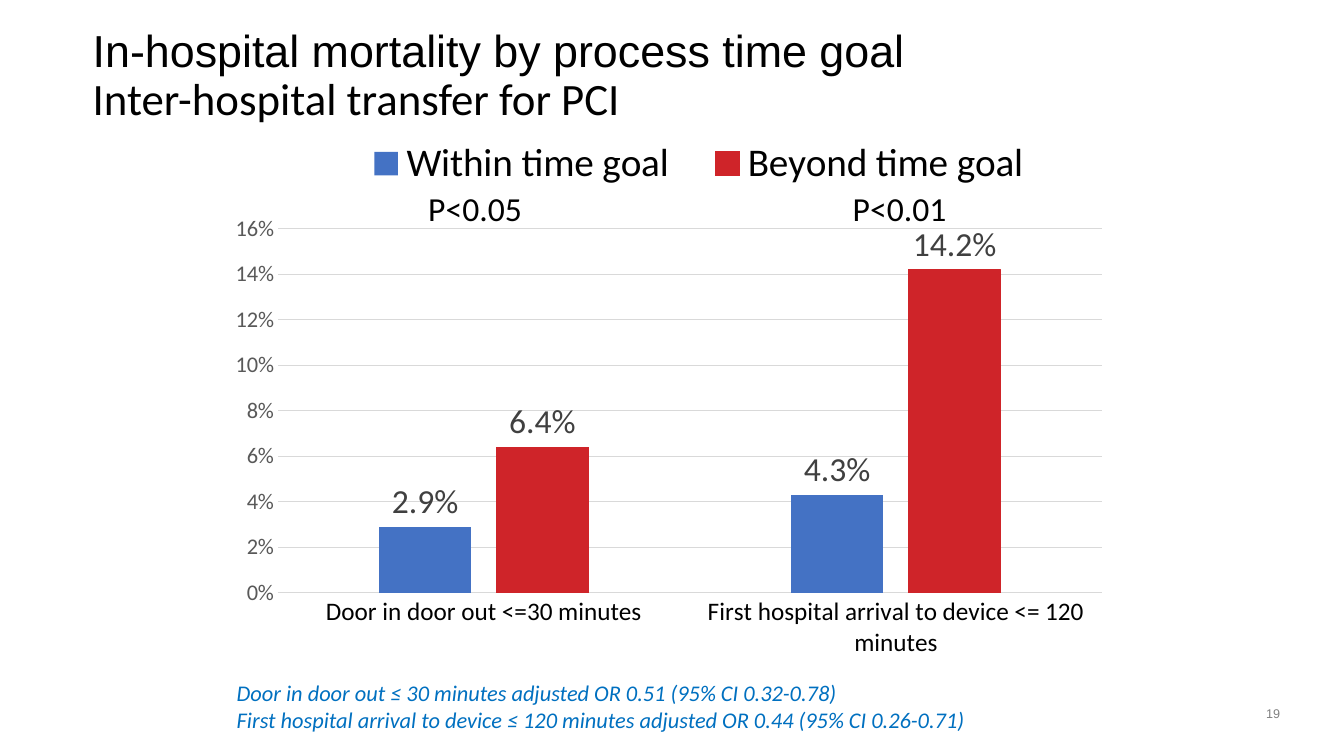
from dataclasses import dataclass
from typing import Any, NamedTuple

from lxml import etree
from pptx import Presentation
from pptx.chart.data import CategoryChartData
from pptx.dml.color import RGBColor
from pptx.enum.chart import (XL_CHART_TYPE, XL_LABEL_POSITION,
                             XL_LEGEND_POSITION, XL_TICK_MARK)
from pptx.enum.text import MSO_ANCHOR, MSO_AUTO_SIZE, PP_ALIGN
from pptx.oxml.ns import qn
from pptx.util import Inches, Pt

CLUSTERED = XL_CHART_TYPE.COLUMN_CLUSTERED
OUTSIDE_END = XL_LABEL_POSITION.OUTSIDE_END
BOTTOM = XL_LEGEND_POSITION.BOTTOM
NO_TICK = XL_TICK_MARK.NONE
MIDDLE = MSO_ANCHOR.MIDDLE
NO_FIT = MSO_AUTO_SIZE.NONE
LEFT, CENTER = PP_ALIGN.LEFT, PP_ALIGN.CENTER

SLIDE_W, SLIDE_H = Inches(13.33), Inches(7.5)
COLUMNS, ROWS = 48, 27


# Theme
@dataclass(frozen=True)
class Theme:
    heading: str = "Arial"
    body: str = "Calibri"
    ink: str = "000000"
    label: str = "404040"
    axis: str = "595959"
    grid: str = "D9D9D9"
    number: str = "808080"
    note: str = "0070C0"
    within: str = "4472C4"
    beyond: str = "CF2429"
    title_size: int = 32
    legend_size: int = 28
    value_size: int = 24
    category_size: int = 18
    small_size: int = 16
    number_size: int = 9
    hairline: float = 0.75


THEME = Theme()


class Area(NamedTuple):
    """Left, top, width and height in grid columns and rows."""
    column: float
    row: float
    columns: float
    rows: float

    def box(self) -> tuple[int, int, int, int]:
        across, down = SLIDE_W / COLUMNS, SLIDE_H / ROWS
        return (round(self.column * across), round(self.row * down),
                round(self.columns * across), round(self.rows * down))


class Share(NamedTuple):
    """Left, top, width and height as shares of the chart."""
    x: float
    y: float
    w: float
    h: float


@dataclass(frozen=True)
class Outcome:
    name: str
    mortality: tuple[float, ...]
    color: str


@dataclass(frozen=True)
class Caption:
    lines: tuple[str, ...]
    area: Area
    size: int = THEME.value_size
    color: str = THEME.ink
    face: str = THEME.body
    italic: bool = False
    wrap: bool = False
    align: Any = LEFT


# Content
TITLE_LINES = (("In-hospital mortality by process time goal", THEME.heading),
               ("Inter-hospital transfer for PCI", THEME.body))
TITLE_AREA = Area(3.31, 1.44, 41.4, 2.6)
CHART_AREA = Area(8, 4.68, 32, 19.4)
PLOT_SHARE = Share(0.06, 0.18, 0.92, 0.67)
LEGEND_SHARE = Share(0.13, 0.01, 0.8, 0.1)
GOALS = ("Door in door out <=30 minutes",
         "First hospital arrival to device <= 120 minutes")
OUTCOMES = (Outcome("Within time goal", (0.029, 0.043), THEME.within),
            Outcome("Beyond time goal", (0.064, 0.142), THEME.beyond))
CAPTIONS = (
    Caption(("Door in door out ≤ 30 minutes adjusted OR 0.51 (95% CI 0.32-0.78)",
             "First hospital arrival to device ≤ 120 minutes adjusted OR 0.44 "
             "(95% CI 0.26-0.71)"),
            Area(8.1, 24.08, 27.07, 2.3), THEME.small_size, THEME.note, italic=True),
    Caption(("P<0.05",), Area(14.94, 6.54, 4.1, 1.8)),
    Caption(("P<0.01",), Area(30.1, 6.52, 4.1, 1.8)),
    Caption(("19",), Area(44.71, 25.02, 1.51, 0.94), THEME.number_size,
            THEME.number, THEME.heading, wrap=True, align=CENTER),
)


def apply(target: Any, values: dict[str, Any]) -> None:
    for attribute, value in values.items():
        setattr(target, attribute, value)


def style_font(font: Any, size: int, color: str, face: str = THEME.body,
               italic: bool = False) -> None:
    apply(font, {"size": Pt(size), "name": face, "bold": False, "italic": italic})
    font.color.rgb = RGBColor.from_string(color)


def style_line(line: Any, color: str) -> None:
    line.color.rgb = RGBColor.from_string(color)
    line.width = Pt(THEME.hairline)


def manual_layout(share: Share, inner: bool = False) -> Any:
    layout = etree.Element(qn("c:layout"))
    manual = etree.SubElement(layout, qn("c:manualLayout"))
    settings = {"layoutTarget": "inner"} if inner else {}
    settings |= {"xMode": "edge", "yMode": "edge"}
    settings |= {key: str(value) for key, value in share._asdict().items()}
    for tag, value in settings.items():
        etree.SubElement(manual, qn(f"c:{tag}"), val=value)
    return layout


def drop_layout(parent: Any) -> None:
    for layout in parent.findall(qn("c:layout")):
        parent.remove(layout)


def add_title(slide: Any) -> None:
    title = slide.shapes.title
    apply(title, dict(zip(("left", "top", "width", "height"), TITLE_AREA.box())))
    frame = title.text_frame
    apply(frame, {"auto_size": NO_FIT, "vertical_anchor": MIDDLE, "word_wrap": True,
                  "margin_left": 0, "margin_top": 0,
                  "margin_right": 0, "margin_bottom": 0})
    heading = frame.paragraphs[0]
    apply(heading, {"alignment": LEFT, "line_spacing": 0.9})
    for index, (words, face) in enumerate(TITLE_LINES):
        if index:
            heading.add_line_break()
        run = heading.add_run()
        run.text = words
        style_font(run.font, THEME.title_size, THEME.ink, face)


def add_caption(slide: Any, caption: Caption) -> None:
    frame = slide.shapes.add_textbox(*caption.area.box()).text_frame
    frame.word_wrap = caption.wrap
    frame.text = "\n".join(caption.lines)
    for paragraph in frame.paragraphs:
        paragraph.alignment = caption.align
        style_font(paragraph.runs[0].font, caption.size, caption.color,
                   caption.face, caption.italic)


def add_mortality_chart(slide: Any) -> None:
    data = CategoryChartData(number_format="0.0%")
    data.categories = GOALS
    for outcome in OUTCOMES:
        data.add_series(outcome.name, outcome.mortality)
    chart = slide.shapes.add_chart(CLUSTERED, *CHART_AREA.box(), data).chart
    apply(chart, {"has_title": False, "has_legend": True})
    style_font(chart.font, 10, THEME.ink)

    # Columns and their values
    columns = chart.plots[0]
    apply(columns, {"gap_width": 219, "overlap": -27, "vary_by_categories": False})
    for series, outcome in zip(columns.series, OUTCOMES):
        series.format.fill.solid()
        series.format.fill.fore_color.rgb = RGBColor.from_string(outcome.color)
        labels = series.data_labels
        apply(labels, {"show_value": True, "position": OUTSIDE_END,
                       "number_format": "0.0%", "number_format_is_linked": False})
        style_font(labels.font, THEME.value_size, THEME.label)
    style_line(columns.series[1].format.line, THEME.beyond)

    # Axes
    goals, rate = chart.category_axis, chart.value_axis
    for axis in (goals, rate):
        apply(axis, {"major_tick_mark": NO_TICK, "minor_tick_mark": NO_TICK})
    style_font(goals.tick_labels.font, THEME.category_size, THEME.ink)
    style_line(goals.format.line, THEME.grid)
    apply(rate, {"minimum_scale": 0, "maximum_scale": 0.16, "major_unit": 0.02})
    apply(rate.tick_labels, {"number_format": "0%", "number_format_is_linked": False})
    style_font(rate.tick_labels.font, THEME.small_size, THEME.axis)
    rate.format.line.fill.background()
    style_line(rate.major_gridlines.format.line, THEME.grid)

    # Legend and plot positions
    legend = chart.legend
    apply(legend, {"position": BOTTOM, "include_in_layout": False})
    style_font(legend.font, THEME.legend_size, THEME.ink)
    key = legend._element
    drop_layout(key)
    key.find(qn("c:legendPos")).addnext(manual_layout(LEGEND_SHARE))
    plot_area = chart._chartSpace.chart.plotArea
    drop_layout(plot_area)
    plot_area.insert(0, manual_layout(PLOT_SHARE, inner=True))


def main() -> None:
    deck = Presentation()
    apply(deck, {"slide_width": SLIDE_W, "slide_height": SLIDE_H})
    slide = deck.slides.add_slide(deck.slide_layouts[5])
    add_title(slide)
    add_mortality_chart(slide)
    for caption in CAPTIONS:
        add_caption(slide, caption)
    deck.save("out.pptx")


if __name__ == "__main__":
    main()
